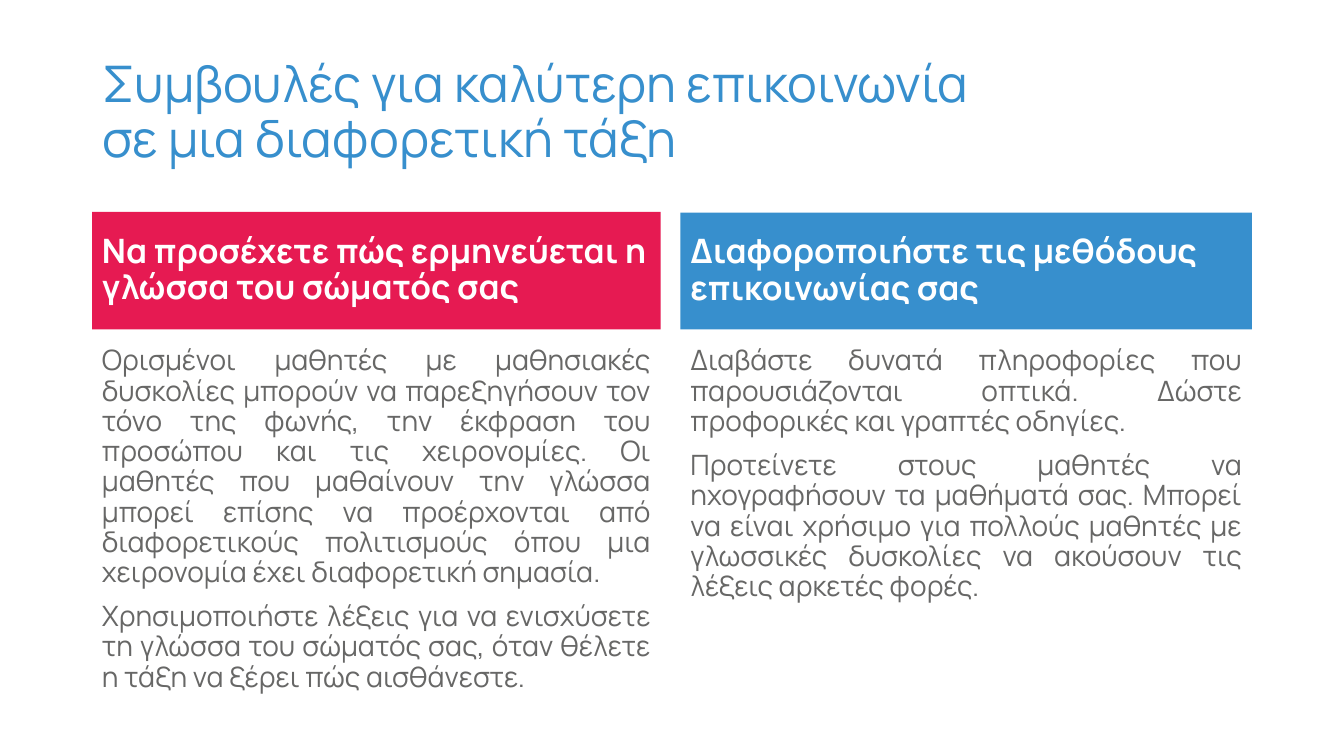
from pptx import Presentation
from pptx.dml.color import RGBColor
from pptx.enum.shapes import MSO_SHAPE
from pptx.enum.text import MSO_ANCHOR, MSO_AUTO_SIZE, PP_ALIGN
from pptx.util import Cm, Pt

RECTANGLE = MSO_SHAPE.RECTANGLE
TOP, MIDDLE = MSO_ANCHOR.TOP, MSO_ANCHOR.MIDDLE
LEFT, JUSTIFY = PP_ALIGN.LEFT, PP_ALIGN.JUSTIFY
NO_AUTOFIT = MSO_AUTO_SIZE.NONE

COLOURS = {"blue": "378FCD", "red": "E61A52", "grey": "676766", "white": "FFFFFF"}
TITLE_FONT = {"name": "Manrope", "size": Pt(36), "bold": False}
HEADING_FONT = {"name": "Manrope", "size": Pt(24), "bold": True}
ADVICE_FONT = {"name": "Manrope", "size": Pt(20), "bold": False}

TITLE = "Συμβουλές για καλύτερη επικοινωνία \vσε μια διαφορετική τάξη"
COLUMNS = [
    {
        "left": 2.32, "width": 14.33, "heading_top": 5.34, "fill": "red",
        "heading": "Να προσέχετε πώς ερμηνεύεται η γλώσσα του σώματός σας",
        "advice": [
            "Ορισμένοι μαθητές με μαθησιακές δυσκολίες μπορούν να παρεξηγήσουν "
            "τον τόνο της φωνής, την έκφραση του προσώπου και τις χειρονομίες. "
            "Οι μαθητές που μαθαίνουν την γλώσσα μπορεί επίσης να προέρχονται "
            "από διαφορετικούς πολιτισμούς όπου μια χειρονομία έχει "
            "διαφορετική σημασία.",
            "Χρησιμοποιήστε λέξεις για να ενισχύσετε τη γλώσσα του σώματός "
            "σας, όταν θέλετε η τάξη να ξέρει πώς αισθάνεστε.",
        ],
    },
    {
        "left": 17.15, "width": 14.4, "heading_top": 5.36, "fill": "blue",
        "heading": "Διαφοροποιήστε τις μεθόδους επικοινωνίας σας",
        "advice": [
            "Διαβάστε δυνατά πληροφορίες που παρουσιάζονται οπτικά. Δώστε "
            "προφορικές και γραπτές οδηγίες.",
            "Προτείνετε στους μαθητές να ηχογραφήσουν τα μαθήματά σας. Μπορεί "
            "να είναι χρήσιμο για πολλούς μαθητές με γλωσσικές δυσκολίες να "
            "ακούσουν τις λέξεις αρκετές φορές.",
        ],
    },
]
HEADING_BOTTOM = 8.3
ADVICE_TOP, ADVICE_HEIGHT = 8.61, 9.45


def write(shape, texts, font, colour, anchor=MIDDLE, alignment=LEFT):
    """Fill the shape with one formatted paragraph per text."""
    frame = shape.text_frame
    frame.word_wrap = True
    frame.auto_size = NO_AUTOFIT
    frame.vertical_anchor = anchor
    for index, text in enumerate(texts):
        paragraph = frame.add_paragraph() if index else frame.paragraphs[0]
        paragraph.text = text
        paragraph.alignment = alignment
        paragraph.line_spacing = 0.9
        paragraph.space_before = Pt(10 if index else 0)
        for run in paragraph.runs:
            for attribute, value in font.items():
                setattr(run.font, attribute, value)
            run.font.color.rgb = RGBColor.from_string(COLOURS[colour])


prs = Presentation()
prs.slide_width, prs.slide_height = Cm(33.87), Cm(19.05)
slide = prs.slides.add_slide(prs.slide_layouts[5])

title = slide.shapes.title
title.left, title.top = Cm(2.32), Cm(1.02)
title.width, title.height = Cm(23.77), Cm(3.68)
write(title, [TITLE], TITLE_FONT, "blue")

for column in COLUMNS:
    left, width = Cm(column["left"]), Cm(column["width"])
    heading_top = column["heading_top"]

    heading = slide.shapes.add_shape(
        RECTANGLE, left, Cm(heading_top), width, Cm(HEADING_BOTTOM - heading_top))
    heading.shadow.inherit = False
    heading.fill.solid()
    heading.fill.fore_color.rgb = RGBColor.from_string(COLOURS[column["fill"]])
    heading.line.fill.background()
    write(heading, [column["heading"]], HEADING_FONT, "white")

    advice = slide.shapes.add_textbox(left, Cm(ADVICE_TOP), width, Cm(ADVICE_HEIGHT))
    write(advice, column["advice"], ADVICE_FONT, "grey", TOP, JUSTIFY)

prs.save("out.pptx")
